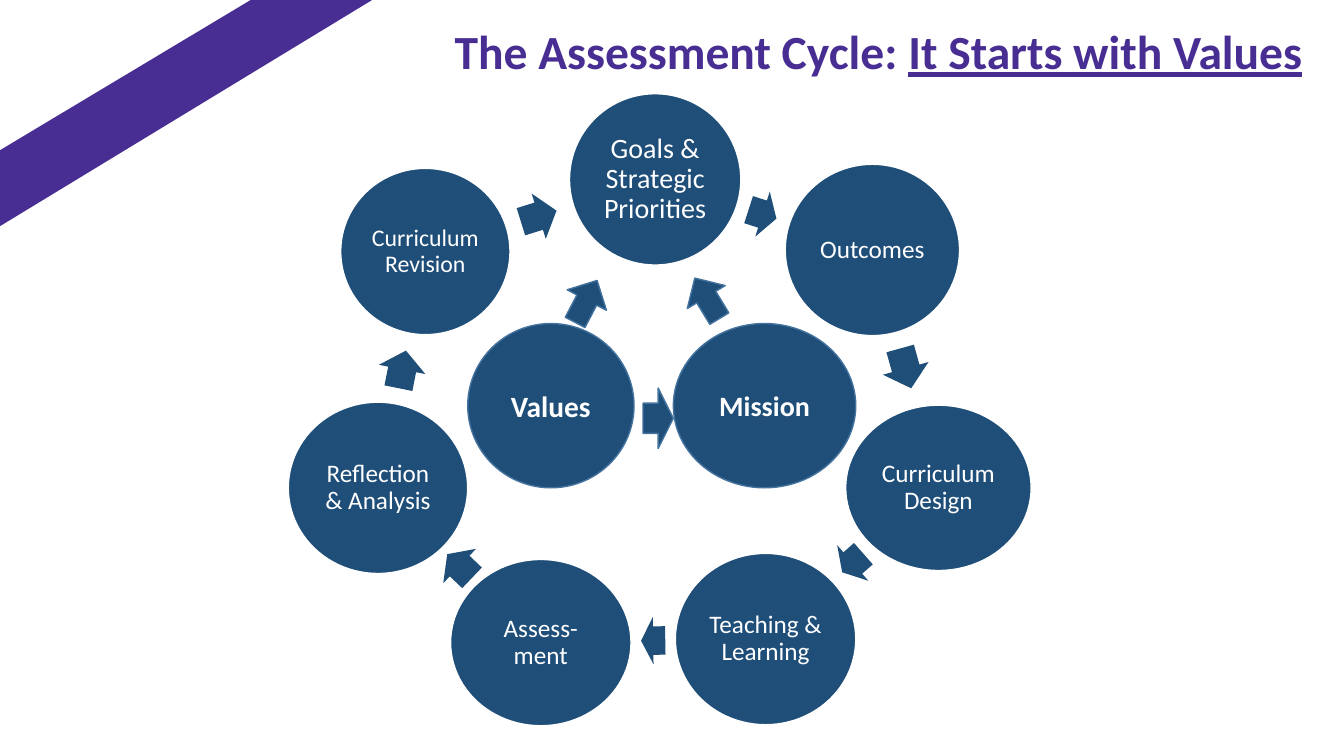
from dataclasses import dataclass
from typing import Optional

from pptx import Presentation
from pptx.dml.color import RGBColor
from pptx.enum.shapes import MSO_SHAPE as Preset
from pptx.enum.text import MSO_ANCHOR as Anchor, MSO_AUTO_SIZE as AutoSize, PP_ALIGN as Align
from pptx.util import Inches, Pt

COLUMNS, ROWS = 80, 45
CELL = Inches(7.5) / ROWS


@dataclass(frozen=True)
class Theme:
    font: str = "Calibri"
    purple: RGBColor = RGBColor(0x48, 0x2E, 0x92)
    navy: RGBColor = RGBColor(0x1F, 0x4E, 0x79)
    steel: RGBColor = RGBColor(0x43, 0x73, 0x9E)
    white: RGBColor = RGBColor(0xFF, 0xFF, 0xFF)
    title_size: float = 34
    large_size: float = 20
    step_size: float = 18
    values_size: float = 21
    small_size: float = 17


THEME = Theme()


@dataclass(frozen=True)
class Circle:
    label: str
    column: float
    row: float
    width: float
    height: float
    size: float = THEME.step_size
    core: bool = False


@dataclass(frozen=True)
class Arrow:
    column: float
    row: float
    width: float
    angle: float = 0
    height: float = 2.82
    core: bool = False


RIBBON = [(-0.6, 9.3), (16.02, -0.66), (20.22, -0.66), (23.04, -0.54), (-0.66, 13.86)]

CIRCLES = [
    Circle("Goals & Strategic Priorities", 39, 10.68, 10.2, 10.2, THEME.large_size),
    Circle("Outcomes", 51.93, 14.88, 10.38, 10.2),
    Circle("Curriculum Design", 55.86, 29.04, 11.04, 9.84),
    Circle("Teaching & Learning", 45.57, 38.04, 10.74, 10.2),
    Circle("Assess-ment", 32.19, 38.25, 10.74, 9.9),
    Circle("Reflection & Analysis", 22.5, 29.04, 10.68, 10.2),
    Circle("Curriculum Revision", 25.32, 14.97, 10.08, 9.9, THEME.small_size),
    Circle("Mission", 45.51, 24.15, 10.86, 9.78, THEME.large_size, core=True),
    Circle("Values", 32.79, 24.15, 9.9, 9.78, THEME.values_size, core=True),
]

ARROWS = [
    Arrow(45.39, 12.75, 1.74, 17.9),
    Arrow(53.91, 21.93, 2.46, 74.5),
    Arrow(50.76, 33.51, 1.68, 138.8),
    Arrow(38.88, 38.13, 1.44, 179.1),
    Arrow(27.36, 33.69, 2.04, 223.6),
    Arrow(23.94, 21.99, 2.28, 281.3),
    Arrow(32.07, 12.87, 2.22, 342.7),
    Arrow(39.18, 24.9, 1.8, height=3.6, core=True),
    Arrow(34.89, 17.94, 2.82, 297.6, 2.64, core=True),
    Arrow(42.09, 17.76, 2.82, 238.8, 2.64, core=True),
]


def cells(count: float) -> int:
    return round(count * CELL)


def paint(shape, fill: RGBColor, outline: Optional[RGBColor] = None) -> None:
    shape.shadow.inherit = False
    shape.fill.solid()
    shape.fill.fore_color.rgb = fill
    if outline is None:
        shape.line.fill.background()
    else:
        shape.line.color.rgb = outline
        shape.line.width = Pt(1)


def add_centred(page, preset: Preset, item: Circle | Arrow):
    return page.shapes.add_shape(
        preset,
        cells(item.column - item.width / 2),
        cells(item.row - item.height / 2),
        cells(item.width),
        cells(item.height),
    )


def style_font(para, size: float, color: RGBColor, bold: bool) -> None:
    font = para.font
    font.name, font.size, font.bold = THEME.font, Pt(size), bold
    font.color.rgb = color


def draw_ribbon(page) -> None:
    corners = [(cells(column), cells(row)) for column, row in RIBBON]
    builder = page.shapes.build_freeform(*corners[0])
    builder.add_line_segments(corners[1:], close=True)
    paint(builder.convert_to_shape(), THEME.purple)


def draw_title(page) -> None:
    title = page.shapes.title
    title.left, title.top = cells(15.06), cells(1.32)
    title.width, title.height = cells(63.06), cells(3.84)
    frame = title.text_frame
    frame.auto_size = AutoSize.NONE
    frame.vertical_anchor = Anchor.MIDDLE
    para = frame.paragraphs[0]
    para.alignment = Align.RIGHT
    para.line_spacing = 0.9
    style_font(para, THEME.title_size, THEME.purple, True)
    para.add_run().text = "The Assessment Cycle: "
    span = para.add_run()
    span.text = "It Starts with Values"
    span.font.underline = True


def draw_circle(page, circle: Circle) -> None:
    shape = add_centred(page, Preset.OVAL, circle)
    paint(shape, THEME.navy, THEME.steel if circle.core else THEME.white)
    frame = shape.text_frame
    frame.word_wrap = True
    frame.vertical_anchor = Anchor.MIDDLE
    if not circle.core:
        frame.margin_left = frame.margin_right = Inches(0.03)
        frame.margin_top = frame.margin_bottom = Inches(0.03)
    para = frame.paragraphs[0]
    para.text = circle.label
    para.alignment = Align.CENTER
    para.line_spacing = 1.0 if circle.core else 0.9
    style_font(para, circle.size, THEME.white, circle.core)


def draw_arrow(page, arrow: Arrow) -> None:
    shape = add_centred(page, Preset.RIGHT_ARROW, arrow)
    shape.rotation = arrow.angle
    paint(shape, THEME.navy, THEME.steel if arrow.core else None)
    if not arrow.core:
        shape.adjustments[0] = 0.6


def main() -> None:
    deck = Presentation()
    deck.slide_width, deck.slide_height = cells(COLUMNS), cells(ROWS)
    page = deck.slides.add_slide(deck.slide_layouts.get_by_name("Title Only"))
    draw_ribbon(page)
    draw_title(page)
    for circle in CIRCLES:
        draw_circle(page, circle)
    for arrow in ARROWS:
        draw_arrow(page, arrow)
    deck.save("out.pptx")


if __name__ == "__main__":
    main()
